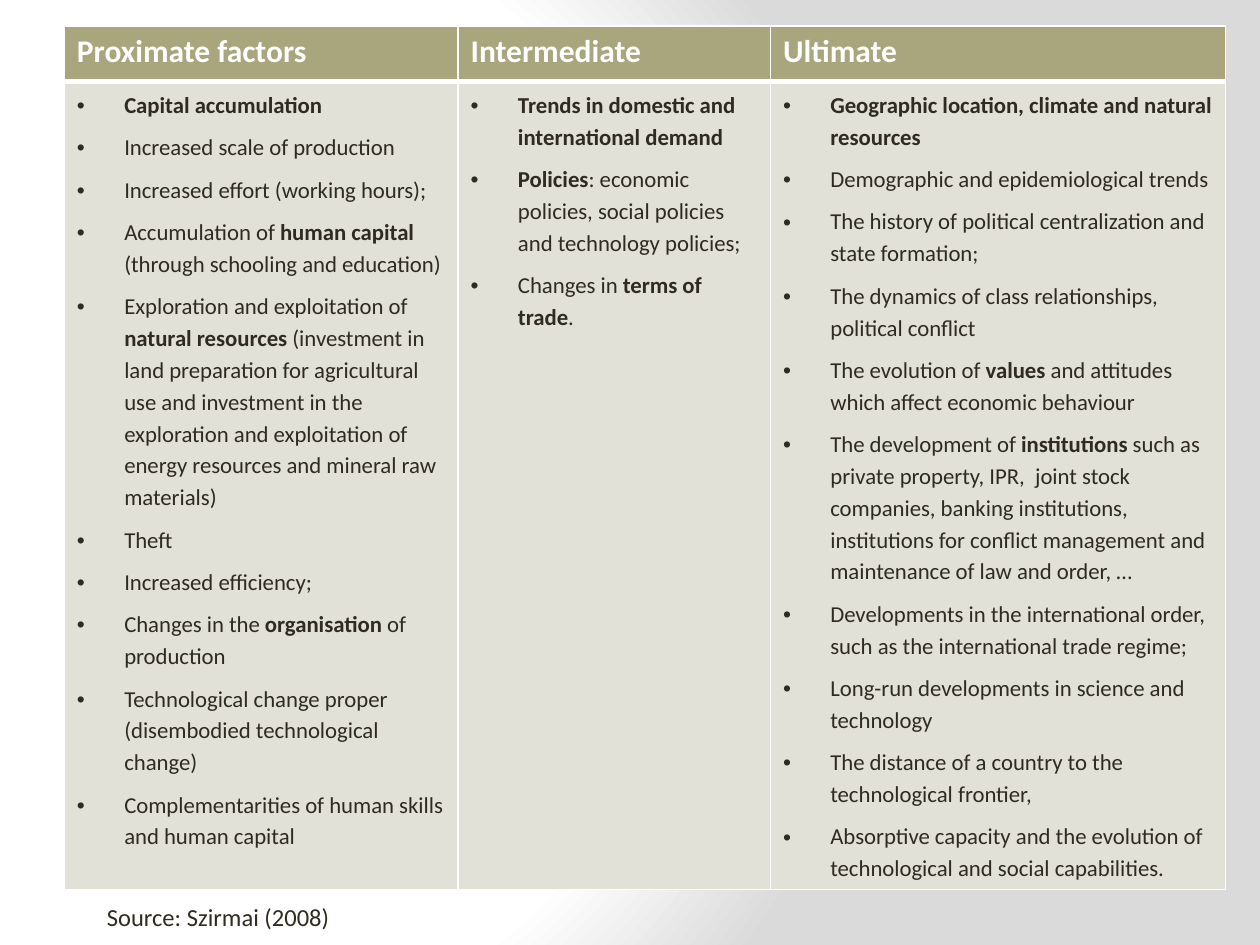
from dataclasses import dataclass

from lxml.etree import SubElement
from pptx import Presentation
from pptx.dml.color import RGBColor
from pptx.enum.text import MSO_AUTO_SIZE
from pptx.oxml import parse_xml
from pptx.oxml.ns import nsdecls, qn
from pptx.util import Pt


@dataclass(frozen=True)
class Theme:
    font: str = "Calibri"
    ink: str = "2F2B20"
    white: str = "FFFFFF"
    gray: str = "DADADA"
    header: str = "A9A57C"
    body: str = "E2E1D7"
    header_size: float = 18
    body_size: float = 13
    source_size: float = 14


# Asterisks enclose the bold parts of each item
COLUMNS = {
    "Proximate factors": (225, [
        "*Capital accumulation*",
        "Increased scale of production",
        "Increased effort (working hours);",
        "Accumulation of *human capital *(through schooling and education)",
        "Exploration and exploitation of *natural resources *(investment in land "
        "preparation for agricultural use and investment in the exploration and "
        "exploitation of energy resources and mineral raw materials)",
        "Theft",
        "Increased efficiency;",
        "Changes in the *organisation* of production",
        "Technological change proper (disembodied technological change)",
        "Complementarities of human skills and human capital",
    ]),
    "Intermediate": (178.5, [
        "*Trends in domestic and international demand*",
        "*Policies*: economic policies, social policies and technology policies;",
        "Changes in *terms of trade*.",
    ]),
    "Ultimate": (260, [
        "*Geographic location, climate and natural resources*",
        "Demographic and epidemiological trends",
        "The history of political centralization and state formation;",
        "The dynamics of class relationships, political conflict",
        "The evolution of *values* and attitudes which affect economic behaviour",
        "The development of *institutions* such as private property, IPR,  joint stock "
        "companies, banking institutions, institutions for conflict management and "
        "maintenance of law and order, …",
        "Developments in the international order, such as the international trade regime;",
        "Long-run developments in science and technology",
        "The distance of a country to the technological frontier,",
        "Absorptive capacity and the evolution of technological and social capabilities.",
    ]),
}


class SlideBuilder:
    def __init__(self, page, theme):
        self.page = page
        self.theme = theme

    def background(self):
        """Circular gradient, white to gray."""
        self.page.background.fill.solid()
        solid = self.page.element.find(".//" + qn("a:solidFill"))
        stops = [(0, self.theme.white), (75, self.theme.white), (100, self.theme.gray)]
        stop_xml = "".join(
            f'<a:gs pos="{position * 1000}"><a:srgbClr val="{color}"/></a:gs>'
            for position, color in stops)
        gradient = parse_xml(
            f'<a:gradFill {nsdecls("a")} rotWithShape="1"><a:gsLst>{stop_xml}</a:gsLst>'
            '<a:path path="circle"><a:fillToRect l="20000" t="50000" r="100000" b="50000"/>'
            '</a:path></a:gradFill>')
        solid.getparent().replace(solid, gradient)

    def add_spans(self, para, text, size, color, bold=False):
        """Add spans, switching weight at every asterisk."""
        for index, part in enumerate(text.split("*")):
            if not part:
                continue
            span = para.add_run()
            span.text = part
            formats = {"name": self.theme.font, "size": Pt(size),
                       "bold": bold or index % 2 == 1}
            for name, value in formats.items():
                setattr(span.font, name, value)
            span.font.color.rgb = RGBColor.from_string(color)

    def bullet(self, para):
        formats = {"line_spacing": 1.15, "space_after": Pt(6)}
        for name, value in formats.items():
            setattr(para, name, value)
        properties = para._p.get_or_add_pPr()
        properties.set("marL", str(Pt(27)))
        properties.set("indent", str(-Pt(27)))
        SubElement(properties, qn("a:buFont"), typeface="Arial")
        SubElement(properties, qn("a:buChar"), char="•")
        tabs = SubElement(properties, qn("a:tabLst"))
        SubElement(tabs, qn("a:tab"), pos=str(Pt(18)), algn="l")

    def paint_cell(self, cell, fill, **widths):
        """White borders first, then the fill, as the schema orders them."""
        properties = cell._tc.get_or_add_tcPr()
        for side in "LRTB":
            line = SubElement(properties, qn(f"a:ln{side}"), w=str(Pt(widths.get(side, 1))))
            paint = SubElement(line, qn("a:solidFill"))
            SubElement(paint, qn("a:srgbClr"), val=self.theme.white)
        cell.fill.solid()
        cell.fill.fore_color.rgb = RGBColor.from_string(fill)

    def table(self, columns, left, top, height, row_heights):
        theme = self.theme
        width = sum(column_width for column_width, _ in columns.values())
        frame = self.page.shapes.add_table(
            2, len(columns), Pt(left), Pt(top), Pt(width), Pt(height))
        table = frame.table
        table.horz_banding = False
        for row, row_height in zip(table.rows, row_heights):
            row.height = Pt(row_height)
        for index, (heading, (column_width, items)) in enumerate(columns.items()):
            table.columns[index].width = Pt(column_width)
            head, body = table.cell(0, index), table.cell(1, index)
            self.paint_cell(head, theme.header, B=3)
            self.paint_cell(body, theme.body, T=3)
            self.add_spans(head.text_frame.paragraphs[0], heading,
                           theme.header_size, theme.white, bold=True)
            for number, item in enumerate(items):
                text = body.text_frame
                para = text.add_paragraph() if number else text.paragraphs[0]
                self.bullet(para)
                self.add_spans(para, item, theme.body_size, theme.ink)
        frame.height = Pt(height)

    def label(self, text, left, top, width, height):
        box = self.page.shapes.add_textbox(Pt(left), Pt(top), Pt(width), Pt(height))
        formats = {"word_wrap": False, "auto_size": MSO_AUTO_SIZE.SHAPE_TO_FIT_TEXT}
        for name, value in formats.items():
            setattr(box.text_frame, name, value)
        self.add_spans(box.text_frame.paragraphs[0], text,
                       self.theme.source_size, self.theme.ink)


def main():
    deck = Presentation()
    deck.slide_width, deck.slide_height = Pt(720), Pt(540)
    builder = SlideBuilder(deck.slides.add_slide(deck.slide_layouts[6]), Theme())

    builder.background()
    # Table of factors
    builder.table(COLUMNS, left=36.8, top=15, height=486.7, row_heights=(31.5, 327.6))
    # Source line
    builder.label("Source: Szirmai (2008)", 54, 512, 150, 24.5)

    deck.save("out.pptx")


if __name__ == "__main__":
    main()
